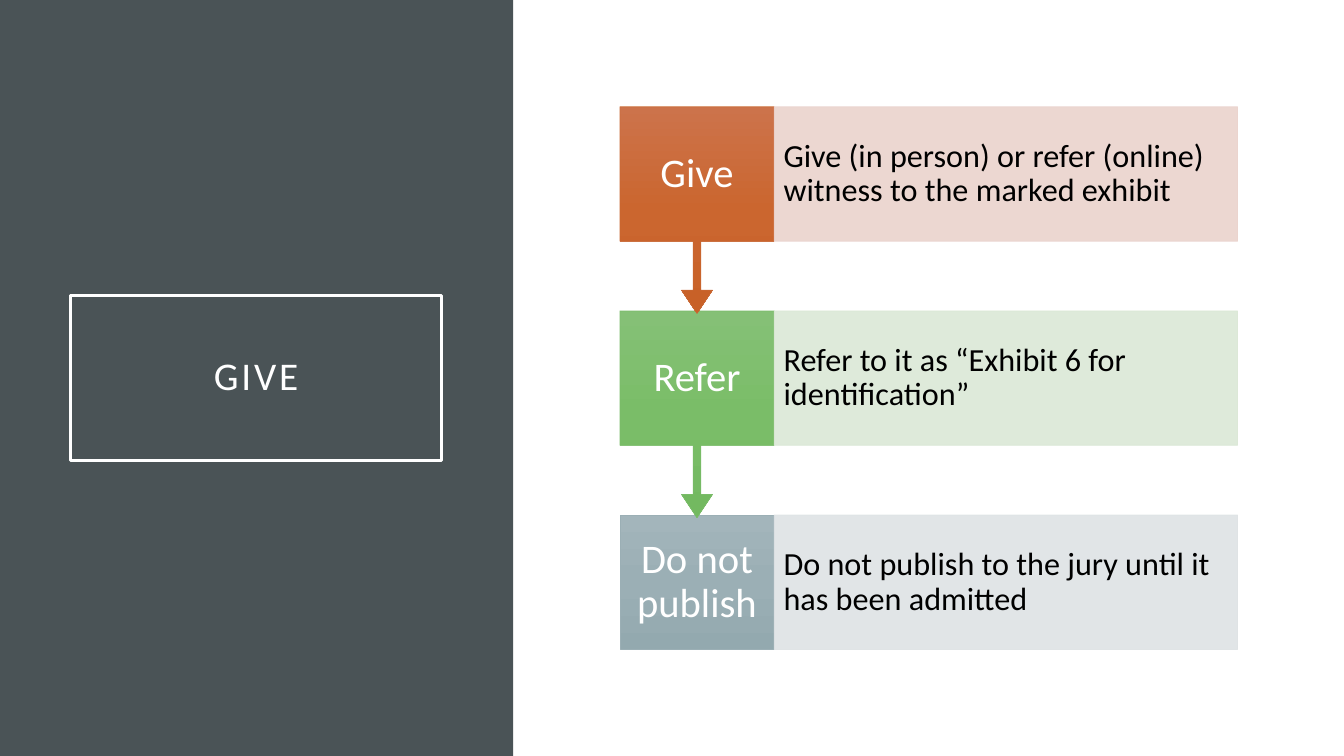
"""Build the GIVE slide: a dark title panel beside a three-step flow."""
from copy import deepcopy
from dataclasses import dataclass

from pptx import Presentation
from pptx.dml.color import RGBColor
from pptx.enum.shapes import MSO_SHAPE as SHAPE
from pptx.enum.text import MSO_ANCHOR as ANCHOR, PP_ALIGN as ALIGN
from pptx.oxml.ns import qn
from pptx.oxml.xmlchemy import OxmlElement
from pptx.shapes.autoshape import Shape
from pptx.slide import Slide
from pptx.util import Pt

FONT = "Calibri"
WHITE, BLACK, PANEL = "FFFFFF", "000000", "4A5356"
LABEL_LEFT, LABEL_W, DETAIL_W = 442.8, 110.2, 331
TOP, PITCH, BOX_H, CALLOUT_H = 76.3, 145.8, 96, 147.6
ARROW_ADJUSTMENTS = (0.05, 0.1, 0.15, 0.65)


@dataclass
class Step:
    label: str
    detail: str
    gradient: tuple[str, str, str]
    edge: str
    tint: str


STEPS = [
    Step("Give", "Give (in person) or refer (online) witness to the marked exhibit",
         ("CC734B", "CB662F", "C86128"), "C96731", "EBD3CD"),
    Step("Refer", "Refer to it as “Exhibit 6 for identification”",
         ("85C076", "7ABD68", "73B960"), "7ABC69", "DBE8D6"),
    Step("Do not publish", "Do not publish to the jury until it has been admitted",
         ("A3B5BB", "9BAFB5", "93A9AF"), "9BAFB5", "DEE3E5"),
]


def rgb(value: str) -> RGBColor:
    """Turn a hex string into a colour."""
    return RGBColor.from_string(value)


def add_box(s: Slide, kind: SHAPE, x: float, y: float, w: float, h: float,
            fill: str = "", line: str = "", line_w: float = 0.5) -> Shape:
    """Add a shadowless shape with an optional fill and line."""
    sp = s.shapes.add_shape(kind, Pt(x), Pt(y), Pt(w), Pt(h))
    sp.shadow.inherit = False
    if fill:
        sp.fill.solid()
        sp.fill.fore_color.rgb = rgb(fill)
    else:
        sp.fill.background()
    if line:
        sp.line.color.rgb = rgb(line)
        sp.line.width = Pt(line_w)
    else:
        sp.line.fill.background()
    return sp


def set_text(sp: Shape, text: str, size: float, color: str, align: ALIGN,
             inset_x: float, inset_y: float, spacing: float = 0) -> None:
    """Write one vertically centred paragraph into a shape."""
    tf = sp.text_frame
    tf.text = text
    tf.word_wrap = True
    tf.vertical_anchor = ANCHOR.MIDDLE
    tf.margin_left = tf.margin_right = Pt(inset_x)
    tf.margin_top = tf.margin_bottom = Pt(inset_y)
    p = tf.paragraphs[0]
    p.alignment = align
    p.line_spacing = 0.9
    r = p.runs[0]
    r.font.name = FONT
    r.font.size = Pt(size)
    r.font.color.rgb = rgb(color)
    if spacing:
        r.font._element.set("spc", str(round(spacing * 100)))


def set_gradient(sp: Shape, colors: tuple[str, str, str]) -> None:
    """Fill a shape with three evenly spaced colours from top to bottom."""
    sp.fill.gradient()
    sp.fill.gradient_angle = 270
    stops = sp._element.spPr.find(f".//{qn('a:gsLst')}")
    stops.insert(1, deepcopy(stops[0]))
    for i, (stop, color) in enumerate(zip(sp.fill.gradient_stops, colors)):
        stop.color.rgb = rgb(color)
        stop.position = i / 2


def set_opacity(sp: Shape, percent: int) -> None:
    """Make the fill and line of a shape partly transparent."""
    for clr in sp._element.spPr.iter(qn("a:srgbClr")):
        alpha = OxmlElement("a:alpha")
        alpha.set("val", str(percent * 1000))
        clr.append(alpha)


def add_step(s: Slide, step: Step, y: float, is_last: bool) -> None:
    """Draw a label, with an arrow unless it is last, and its detail."""
    kind = SHAPE.RECTANGLE if is_last else SHAPE.DOWN_ARROW_CALLOUT
    height = BOX_H if is_last else CALLOUT_H
    label = add_box(s, kind, LABEL_LEFT, y, LABEL_W, height, line=step.edge)
    if not is_last:
        for i, value in enumerate(ARROW_ADJUSTMENTS):
            label.adjustments[i] = value
    set_gradient(label, step.gradient)
    set_text(label, step.label, 29, WHITE, ALIGN.CENTER, 7.8, 16.5)

    detail = add_box(s, SHAPE.RECTANGLE, LABEL_LEFT + LABEL_W, y, DETAIL_W, BOX_H,
                     step.tint, step.tint)
    set_opacity(detail, 90)
    set_text(detail, step.detail, 23, BLACK, ALIGN.LEFT, 6.7, 23)


def main() -> None:
    """Build and save the slide."""
    prs = Presentation()
    prs.slide_width, prs.slide_height = Pt(960), Pt(540)
    s = prs.slides.add_slide(prs.slide_layouts[6])
    add_box(s, SHAPE.RECTANGLE, 0, 0, 366.5, 540, PANEL)
    title = add_box(s, SHAPE.RECTANGLE, 50.4, 211, 265, 118, line=WHITE, line_w=2.5)
    set_text(title, "GIVE", 28, WHITE, ALIGN.CENTER, 14.4, 14.4, spacing=2)
    for i, step in reversed(list(enumerate(STEPS))):
        add_step(s, step, TOP + i * PITCH, i == len(STEPS) - 1)
    prs.save("out.pptx")


if __name__ == "__main__":
    main()
